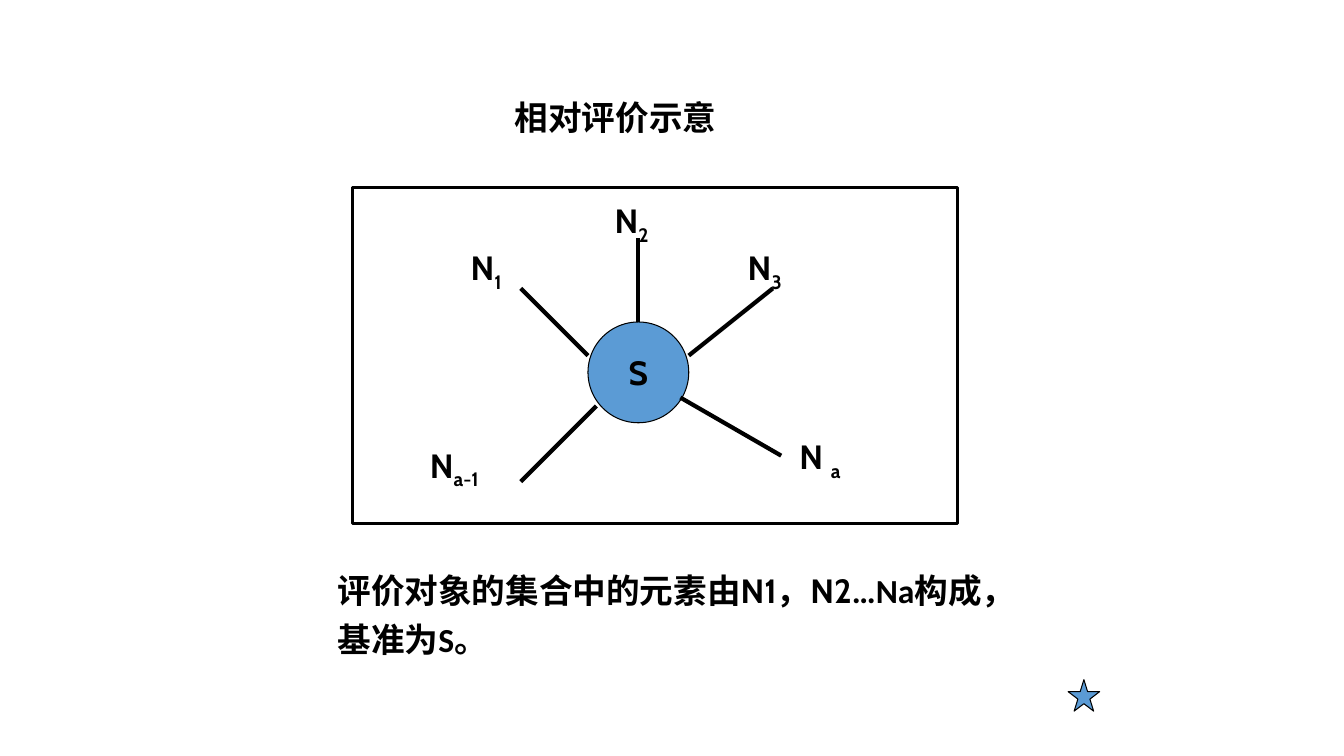
from dataclasses import dataclass

from lxml import etree
from pptx import Presentation
from pptx.dml.color import RGBColor
from pptx.enum.shapes import MSO_CONNECTOR, MSO_SHAPE
from pptx.enum.text import MSO_ANCHOR, MSO_AUTO_SIZE, PP_ALIGN
from pptx.oxml.ns import qn
from pptx.shapes.autoshape import Shape
from pptx.slide import Slide
from pptx.text.text import TextFrame
from pptx.util import Pt

RECTANGLE = MSO_SHAPE.RECTANGLE
OVAL = MSO_SHAPE.OVAL
STAR = MSO_SHAPE.STAR_5_POINT
STRAIGHT = MSO_CONNECTOR.STRAIGHT
FIT_SHAPE = MSO_AUTO_SIZE.SHAPE_TO_FIT_TEXT
TOP, MIDDLE = MSO_ANCHOR.TOP, MSO_ANCHOR.MIDDLE
LEFT, CENTER = PP_ALIGN.LEFT, PP_ALIGN.CENTER

BLACK = RGBColor(0x00, 0x00, 0x00)
BLUE = RGBColor(0x5B, 0x9B, 0xD5)
MAIN_FONT, SECOND_FONT = "Cabin", "Calibri"
TEXT_SIZE = 24
LABEL_HEIGHT = 36
TITLE_ONLY_LAYOUT = 5
TOP_SITE = 0


@dataclass(frozen=True)
class Area:
    left: float
    top: float
    width: float
    height: float


@dataclass(frozen=True)
class Spoke:
    """A line out of the standard S and the label of its element."""
    start: tuple[float, float]
    end: tuple[float, float]
    label_area: Area
    letter: str
    subscript: str
    wrap: bool = True
    joined: bool = False


SPOKES = [
    Spoke((456, 230), (456, 170), Area(432, 139.5, 60, LABEL_HEIGHT), "N", "2", joined=True),
    Spoke((420, 254), (372, 206), Area(329, 173, 43, LABEL_HEIGHT), "N", "1", wrap=False),
    Spoke((492, 254), (552, 206), Area(527, 173, 55.5, LABEL_HEIGHT), "N", "3"),
    Spoke((426, 290), (372, 344), Area(300, 314, 60, LABEL_HEIGHT), "N", "a-1"),
    Spoke((486, 284), (558, 325.5), Area(564, 308, 50, LABEL_HEIGHT), "N ", "a"),
]


def place(area: Area) -> tuple[Pt, Pt, Pt, Pt]:
    return Pt(area.left), Pt(area.top), Pt(area.width), Pt(area.height)


def write(frame: TextFrame, spans: list[tuple[str, str]], wrap: bool = True,
          align: PP_ALIGN = LEFT) -> None:
    """Fill one paragraph with (text, font name) spans."""
    frame.word_wrap = wrap
    frame.vertical_anchor = TOP
    para = frame.paragraphs[0]
    para.alignment = align
    for text, font_name in spans:
        span = para.add_run()
        span.text = text
        span.font.name = font_name
        span.font.size = Pt(TEXT_SIZE)
        span.font.bold = True
        span.font.color.rgb = BLACK


def add_outline_shape(page: Slide, kind: MSO_SHAPE, area: Area, line_width: float,
                      fill: RGBColor | None = None) -> Shape:
    shape = page.shapes.add_shape(kind, *place(area))
    shape.shadow.inherit = False
    if fill is None:
        shape.fill.background()
    else:
        shape.fill.solid()
        shape.fill.fore_color.rgb = fill
    shape.line.color.rgb = BLACK
    shape.line.width = Pt(line_width)
    return shape


def add_text(page: Slide, area: Area, spans: list[tuple[str, str]], wrap: bool = True) -> Shape:
    box = page.shapes.add_textbox(*place(area))
    write(box.text_frame, spans, wrap)
    box.text_frame.auto_size = FIT_SHAPE
    return box


def add_spoke(page: Slide, spoke: Spoke, circle: Shape) -> None:
    line = page.shapes.add_connector(STRAIGHT, *map(Pt, spoke.start + spoke.end))
    line.line.color.rgb = BLACK
    line.line.width = Pt(3)
    etree.SubElement(line._element.spPr, qn("a:effectLst"))
    if spoke.joined:
        line.begin_connect(circle, TOP_SITE)

    spans = [(spoke.letter, MAIN_FONT), (spoke.subscript, MAIN_FONT)]
    label = add_text(page, spoke.label_area, spans, spoke.wrap)
    lowered = label.text_frame.paragraphs[0].runs[1]
    lowered._r.get_or_add_rPr().set("baseline", "-25000")


def main() -> None:
    deck = Presentation()
    deck.slide_width, deck.slide_height = Pt(960), Pt(540)
    page = deck.slides.add_slide(deck.slide_layouts[TITLE_ONLY_LAYOUT])

    # Title
    title = page.shapes.title
    title.left, title.top, title.width, title.height = place(Area(360.5, 65.5, 159, 36))
    write(title.text_frame, [("相对评价示意", MAIN_FONT)], wrap=False)
    title.text_frame.auto_size = FIT_SHAPE

    # Frame and the standard S
    add_outline_shape(page, RECTANGLE, Area(252, 134, 432, 240), 2.25)
    circle = add_outline_shape(page, OVAL, Area(420, 230, 72, 72), 0.75, BLUE)
    write(circle.text_frame, [("S", MAIN_FONT)], wrap=False, align=CENTER)
    circle.text_frame.vertical_anchor = MIDDLE

    # Elements around the standard
    for spoke in SPOKES:
        add_spoke(page, spoke, circle)

    # Explanation
    caption = add_text(page, Area(234, 398, 493, 77), [
        ("评价对象的集合中的元素由N1，N2", MAIN_FONT),
        ("…Na构成，基准为S。", SECOND_FONT),
    ])
    caption.text_frame.paragraphs[0].line_spacing = 1.2

    # Corner star
    add_outline_shape(page, STAR, Area(763, 485.5, 22.5, 22.5), 0.75, BLUE)

    deck.save("out.pptx")


if __name__ == "__main__":
    main()
